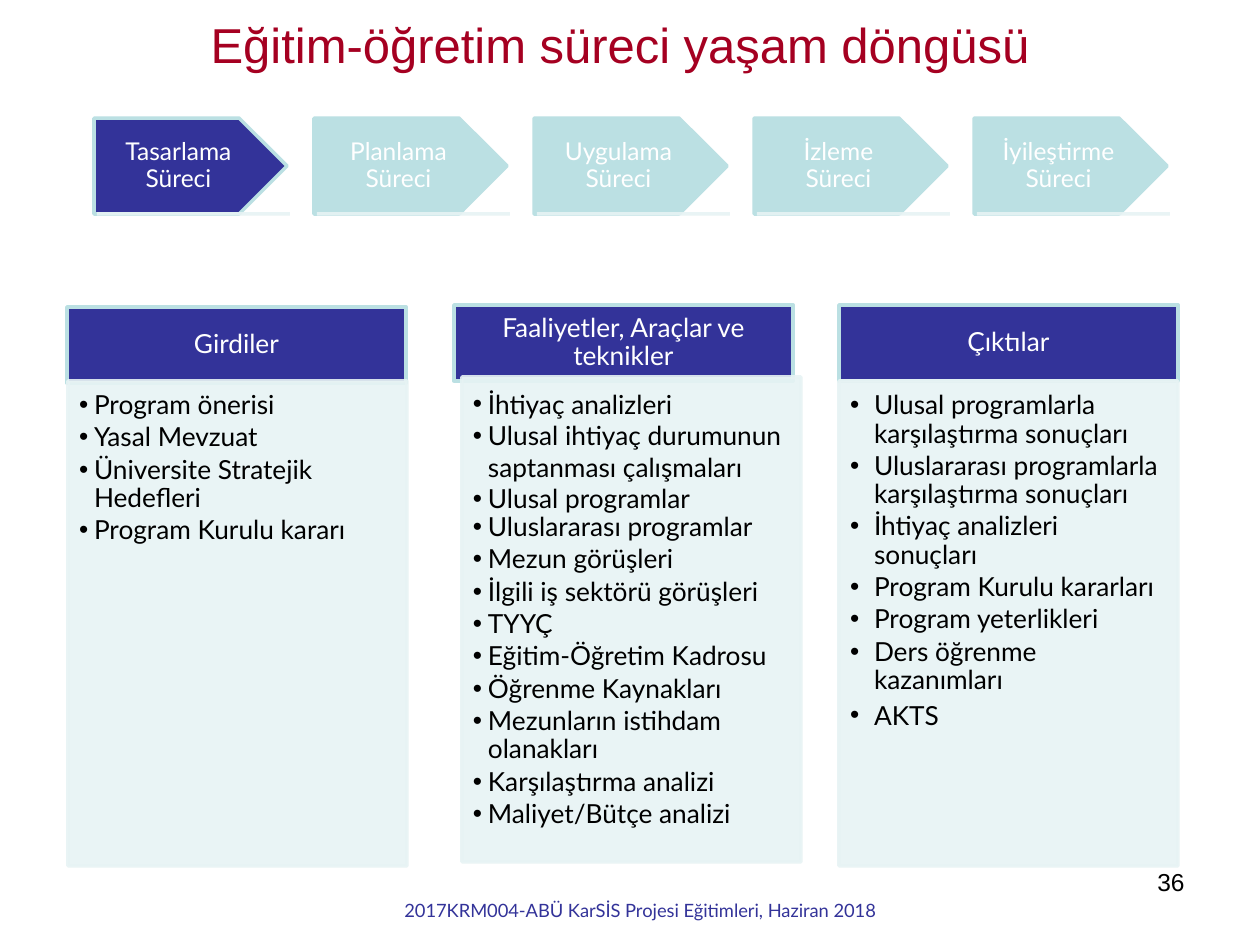
from dataclasses import dataclass

from lxml import etree
from pptx import Presentation, util as u
from pptx.dml.color import RGBColor
from pptx.enum import shapes, text
from pptx.oxml.ns import qn

PX = 914400 / 126
ALIGN, ANCHOR = text.PP_ALIGN, text.MSO_ANCHOR


@dataclass(frozen=True)
class Theme:
    title: str = "A50021"
    active: str = "333399"
    accent: str = "BBE0E3"
    panel: str = "E7F3F4"
    light: str = "FFFFFF"
    dark: str = "000000"
    heading_font: str = "Arial"
    body_font: str = "Lato"
    title_size: float = 28
    body_size: float = 15
    step_size: float = 14
    footer_size: float = 10.5
    line: float = 2
    panel_alpha: int = 90


@dataclass(frozen=True)
class Box:
    x: int
    y: int
    w: int
    h: int


@dataclass(frozen=True)
class Column:
    heading: str
    header: Box
    panel: Box
    placeholder: int
    indent: int
    items: tuple[str, ...]
    loose: tuple[int, ...] = ()  # items set at full line height


T = Theme()
STEPS = ("Tasarlama", "Planlama", "Uygulama", "İzleme", "İyileştirme")
STEP, STEP_PITCH = Box(94, 118, 193, 96), 220
HEADER_W, HEADER_H, PANEL_W, PANEL_H = 339, 76, 339, 485
COLUMNS = (
    Column("Girdiler", Box(67, 307, HEADER_W, HEADER_H),
           Box(68, 381, PANEL_W, PANEL_H), 1, 15,
           ("Program önerisi", "Yasal Mevzuat", "Üniversite Stratejik Hedefleri",
            "Program Kurulu kararı")),
    Column("Faaliyetler, Araçlar ve teknikler", Box(454, 305, HEADER_W, HEADER_H),
           Box(462, 377, PANEL_W, PANEL_H), 2, 15,
           ("İhtiyaç analizleri", "Ulusal ihtiyaç durumunun saptanması çalışmaları",
            "Ulusal programlar", "Uluslararası programlar", "Mezun görüşleri",
            "İlgili iş sektörü görüşleri", "TYYÇ", "Eğitim-Öğretim Kadrosu",
            "Öğrenme Kaynakları", "Mezunların istihdam olanakları",
            "Karşılaştırma analizi", "Maliyet/Bütçe analizi"), (0, 1, 2)),
    Column("Çıktılar", Box(839, 305, HEADER_W, HEADER_H),
           Box(839, 381, PANEL_W, PANEL_H), 4, 24,
           ("Ulusal programlarla karşılaştırma sonuçları",
            "Uluslararası programlarla karşılaştırma sonuçları",
            "İhtiyaç analizleri sonuçları", "Program Kurulu kararları",
            "Program yeterlikleri", "Ders öğrenme kazanımları", "AKTS"), (6,)),
)


def px(n: float) -> int:
    return round(n * PX)


def place(sp, box: Box) -> None:
    sp.left, sp.top, sp.width, sp.height = map(px, (box.x, box.y, box.w, box.h))


def paint(sp, fill: str, line: str) -> None:
    sp.fill.solid()
    sp.fill.fore_color.rgb = RGBColor.from_string(fill)
    sp.line.color.rgb = RGBColor.from_string(line)
    sp.line.width = u.Pt(T.line)


def make_translucent(sp) -> None:
    """Apply the panel opacity to every colour in the shape's properties."""
    for color in sp.element.spPr.iter(qn("a:srgbClr")):
        etree.SubElement(color, qn("a:alpha"), val=str(T.panel_alpha * 1000))


def set_insets(tf, left: int, top: int, right: int, bottom: int) -> None:
    tf.margin_left, tf.margin_top = px(left), px(top)
    tf.margin_right, tf.margin_bottom = px(right), px(bottom)


def style(p, font: str, size: float, color: str, align=ALIGN.LEFT) -> None:
    p.alignment = align
    for r in p.runs:
        r.font.name, r.font.size, r.font.bold = font, u.Pt(size), False
        r.font.color.rgb = RGBColor.from_string(color)


def add_label_shape(s, kind, box: Box, label: str, size: float, fill: str,
                    insets: tuple[int, int, int, int]) -> None:
    sp = s.shapes.add_shape(kind, 0, 0, 0, 0)
    place(sp, box)
    sp.shadow.inherit = False
    paint(sp, fill, T.accent)
    tf = sp.text_frame
    tf.word_wrap, tf.vertical_anchor = True, ANCHOR.MIDDLE
    set_insets(tf, *insets)
    tf.text = label
    p = tf.paragraphs[0]
    p.line_spacing = 0.9
    style(p, T.body_font, size, T.light, ALIGN.CENTER)


def add_underline(s, x: int, y: int, w: int) -> None:
    line = s.shapes.add_connector(shapes.MSO_CONNECTOR.STRAIGHT,
                                  px(x), px(y), px(x + w), px(y))
    line.line.color.rgb = RGBColor.from_string(T.panel)
    line.line.width = u.Pt(T.line)
    make_translucent(line)
    etree.SubElement(line.element.spPr, qn("a:effectLst"))


def add_steps(s) -> None:
    for i, name in enumerate(STEPS):
        x = STEP.x + i * STEP_PITCH
        add_label_shape(s, shapes.MSO_SHAPE.PENTAGON, Box(x, STEP.y, STEP.w, STEP.h),
                        f"{name} Süreci", T.step_size,
                        T.accent if i else T.active, (14, 8, 14, 8))
        add_underline(s, x + 3, STEP.y + STEP.h, STEP.w)


def set_bullet(p, indent: int) -> None:
    pPr = p._p.get_or_add_pPr()
    pPr.set("marL", str(px(indent)))
    pPr.set("indent", str(-px(indent)))
    etree.SubElement(pPr, qn("a:buChar"), char="•")


def add_column(s, col: Column, body) -> None:
    add_label_shape(s, shapes.MSO_SHAPE.RECTANGLE, col.header, col.heading,
                    T.body_size, T.active, (15, 9, 15, 9))
    body.element.getparent().append(body.element)  # panel overlaps its header
    place(body, col.panel)
    paint(body, T.panel, T.panel)
    make_translucent(body)
    tf = body.text_frame
    tf.auto_size, tf.vertical_anchor = text.MSO_AUTO_SIZE.NONE, ANCHOR.TOP
    set_insets(tf, 11, 11, 15, 16)
    tf.text = "\n".join(col.items)
    for i, p in enumerate(tf.paragraphs):
        loose = i in col.loose
        p.line_spacing = 1.0 if loose else 0.9
        p.space_before = u.Pt(0)
        p.space_after = u.Pt(0 if loose else 2.25)
        set_bullet(p, col.indent)
        style(p, T.body_font, T.body_size, T.dark)


def add_note(s, box: Box, note: str, font: str, size: float, color: str, align) -> None:
    sp = s.shapes.add_textbox(0, 0, 0, 0)
    place(sp, box)
    tf = sp.text_frame
    tf.word_wrap = True
    tf.text = note
    style(tf.paragraphs[0], font, size, color, align)


def set_title(s, title: str) -> None:
    sp = s.shapes.title
    place(sp, Box(198, 8, 868, 72))
    tf = sp.text_frame
    tf.word_wrap, tf.vertical_anchor = False, ANCHOR.TOP
    tf.auto_size = text.MSO_AUTO_SIZE.NONE
    tf.text = title
    style(tf.paragraphs[0], T.heading_font, T.title_size, T.title)


def main() -> None:
    prs = Presentation()
    prs.slide_width, prs.slide_height = px(1260), px(945)
    s = prs.slides.add_slide(prs.slide_layouts.get_by_name("Comparison"))
    bodies = {sp.placeholder_format.idx: sp for sp in s.placeholders}
    set_title(s, "Eğitim-öğretim süreci yaşam döngüsü")
    add_steps(s)
    for col in COLUMNS:
        add_column(s, col, bodies[col.placeholder])
    unused = bodies[3].element
    unused.getparent().remove(unused)
    add_note(s, Box(903, 861, 294, 66), "36", T.heading_font, T.step_size,
             T.dark, ALIGN.RIGHT)
    add_note(s, Box(362, 893, 557, 39),
             "2017KRM004-ABÜ KarSİS Projesi Eğitimleri, Haziran 2018",
             T.body_font, T.footer_size, T.active, ALIGN.CENTER)
    prs.save("out.pptx")


if __name__ == "__main__":
    main()
